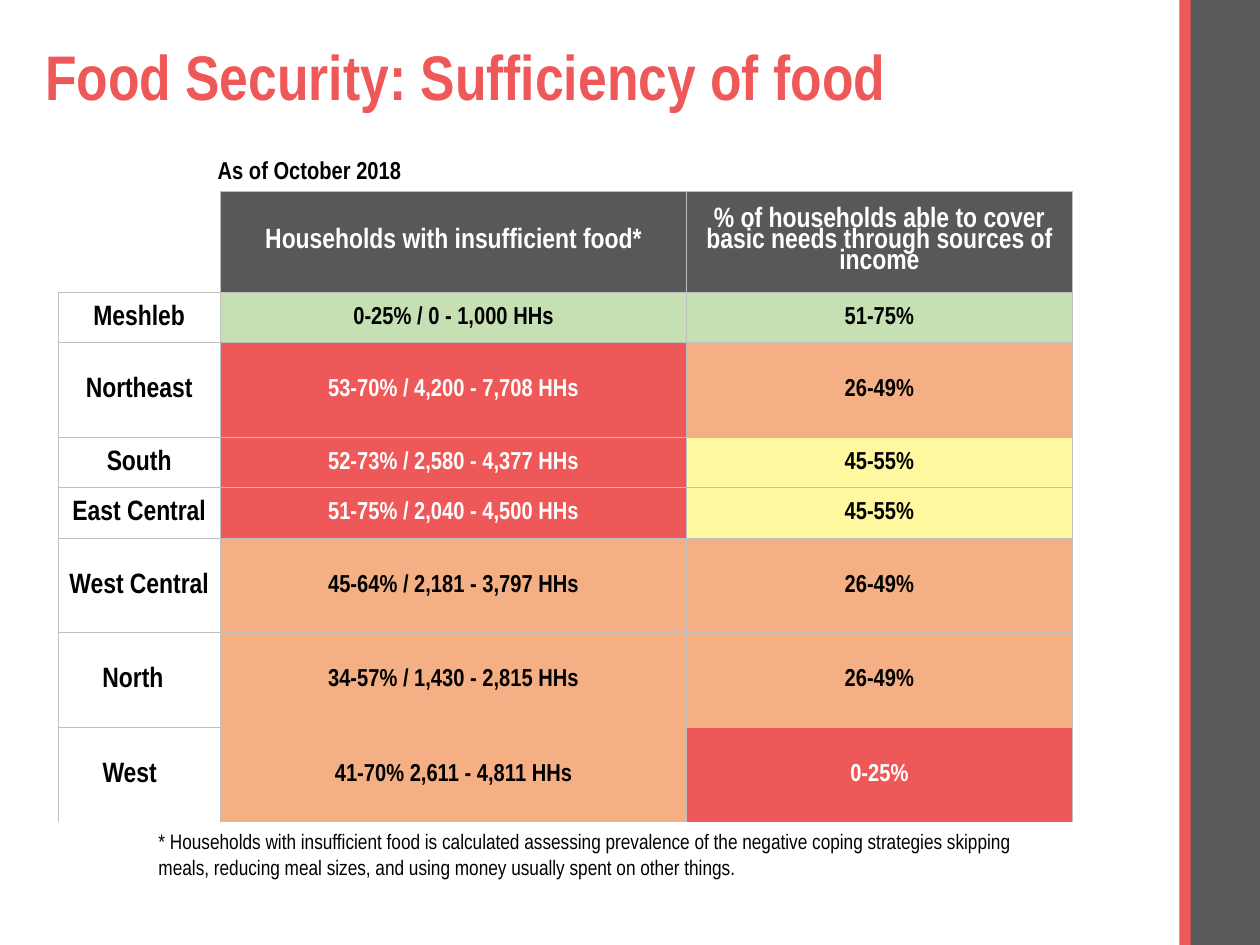
from lxml import etree
from pptx import Presentation
from pptx.dml.color import RGBColor
from pptx.enum.shapes import MSO_SHAPE
from pptx.enum.text import MSO_ANCHOR, PP_ALIGN
from pptx.oxml.ns import qn
from pptx.util import Inches, Pt

RECTANGLE = MSO_SHAPE.RECTANGLE
TOP, MIDDLE = MSO_ANCHOR.TOP, MSO_ANCHOR.MIDDLE
CENTER, LEFT = PP_ALIGN.CENTER, PP_ALIGN.LEFT

BLACK = RGBColor(0x00, 0x00, 0x00)
WHITE = RGBColor(0xFF, 0xFF, 0xFF)
RED = RGBColor(0xEE, 0x58, 0x59)
BAND_GRAY = RGBColor(0x5A, 0x5A, 0x5A)
HEADER_GRAY = RGBColor(0x58, 0x58, 0x5A)
BORDER_GRAY = RGBColor(0xBF, 0xBF, 0xBF)
GREEN = RGBColor(0xC6, 0xE0, 0xB4)
ORANGE = RGBColor(0xF4, 0xB0, 0x84)
YELLOW = RGBColor(0xFF, 0xF8, 0x9F)

WIDTH, HEIGHT = 10, 7.5
COLUMN_WIDTHS = (1.29, 3.7, 3.06)
HEADER_HEIGHT, SHORT, TALL = 0.8, 0.4, 0.75

HEADERS = (
    "Households with insufficient food*",
    "% of households able to cover basic needs through sources of income",
)
# district, row height, extra right inset, then text and fill of each measure
DISTRICTS = (
    ("Meshleb", SHORT, 0, ("0-25% / 0 - 1,000 HHs", GREEN), ("51-75%", GREEN)),
    ("Northeast", TALL, 0, ("53-70% / 4,200 - 7,708 HHs", RED), ("26-49%", ORANGE)),
    ("South", SHORT, 0, ("52-73% / 2,580 - 4,377 HHs", RED), ("45-55%", YELLOW)),
    ("East Central", SHORT, 0, ("51-75% / 2,040 - 4,500 HHs", RED), ("45-55%", YELLOW)),
    ("West Central", TALL, 0, ("45-64% / 2,181 - 3,797 HHs", ORANGE), ("26-49%", ORANGE)),
    ("North", TALL, 0.1, ("34-57% / 1,430 - 2,815 HHs", ORANGE), ("26-49%", ORANGE)),
    ("West", TALL, 0.15, ("41-70% 2,611 - 4,811 HHs", ORANGE), ("0-25%", RED)),
)


class FoodSlide:
    font = "Arial Narrow"

    def __init__(self, presentation):
        self.slide = presentation.slides.add_slide(presentation.slide_layouts[6])

    def set_text(self, frame, text, size, color, bold=True, align=LEFT, spacing=None):
        paragraph = frame.paragraphs[0]
        paragraph.text = text
        paragraph.alignment = align
        if spacing:
            paragraph.line_spacing = spacing
        font = paragraph.font
        font.name, font.size, font.bold = self.font, Pt(size), bold
        font.color.rgb = color

    def band(self, left, width, color):
        """Draw a full-height vertical stripe."""
        stripe = self.slide.shapes.add_shape(
            RECTANGLE, Inches(left), 0, Inches(width), Inches(HEIGHT))
        stripe.shadow.inherit = False
        stripe.fill.solid()
        stripe.fill.fore_color.rgb = color
        stripe.line.fill.background()

    def label(self, box, text, size, color, bold=True, anchor=TOP, spacing=None):
        frame = self.slide.shapes.add_textbox(*map(Inches, box)).text_frame
        frame.word_wrap = True
        frame.vertical_anchor = anchor
        self.set_text(frame, text, size, color, bold, spacing=spacing)

    def table(self, left, top, widths, heights):
        table = self.slide.shapes.add_table(
            len(heights), len(widths), Inches(left), Inches(top),
            Inches(sum(widths)), Inches(sum(heights))).table
        table.first_row = table.horz_banding = False
        for column, width in zip(table.columns, widths):
            column.width = Inches(width)
        for row, height in zip(table.rows, heights):
            row.height = Inches(height)
        return table

    def cell(self, cell, text="", size=14, fill=None, color=BLACK, sides="LRTB",
             extra_right=0, spacing=None):
        cell.vertical_anchor = MIDDLE
        cell.margin_left = cell.margin_top = Inches(0.01)
        cell.margin_right = Inches(0.01 + extra_right)
        cell.margin_bottom = 0
        if text:
            self.set_text(cell.text_frame, text, size, color, align=CENTER, spacing=spacing)
        self.borders(cell, sides)
        if fill is None:
            cell.fill.background()
        else:
            cell.fill.solid()
            cell.fill.fore_color.rgb = fill

    def borders(self, cell, sides):
        """Line the given sides and leave the others open."""
        properties = cell._tc.get_or_add_tcPr()
        for side in "LRTB":
            line = etree.SubElement(properties, qn(f"a:ln{side}"), w=str(Pt(0.5)))
            if side in sides:
                paint = etree.SubElement(line, qn("a:solidFill"))
                etree.SubElement(paint, qn("a:srgbClr"), val=str(BORDER_GRAY))
            else:
                etree.SubElement(line, qn("a:noFill"))


def main():
    presentation = Presentation()
    presentation.slide_width = Inches(WIDTH)
    presentation.slide_height = Inches(HEIGHT)
    page = FoodSlide(presentation)

    page.band(9.43, 0.57, BAND_GRAY)
    page.band(9.36, 0.09, RED)
    page.label((0.26, 0.27, 8.69, 0.74), "Food Security: Sufficiency of food",
               36, RED, anchor=MIDDLE, spacing=0.9)
    page.label((1.16, 6.53, 7.36, 0.9),
               "* Households with insufficient food is calculated assessing prevalence "
               "of the negative coping strategies skipping meals, reducing meal sizes, "
               "and using money usually spent on other things.", 12, BLACK, bold=False)

    heights = [HEADER_HEIGHT] + [district[1] for district in DISTRICTS]
    table = page.table(0.46, 1.52, COLUMN_WIDTHS, heights)
    page.cell(table.cell(0, 0), sides="RB")
    for column, header in enumerate(HEADERS, 1):
        page.cell(table.cell(0, column), header, 16, HEADER_GRAY, WHITE, spacing=0.8)
    for row, (district, _, inset, *measures) in enumerate(DISTRICTS, 1):
        sides = "LRT" if row == len(DISTRICTS) else "LRTB"
        page.cell(table.cell(row, 0), district, 16, sides=sides, extra_right=inset)
        for column, (value, fill) in enumerate(measures, 1):
            page.cell(table.cell(row, column), value, fill=fill, sides=sides,
                      color=WHITE if fill == RED else BLACK)

    page.label((1.63, 1.18, 7.5, 0.34), "As of October 2018", 14, BLACK)
    presentation.save("out.pptx")


if __name__ == "__main__":
    main()
